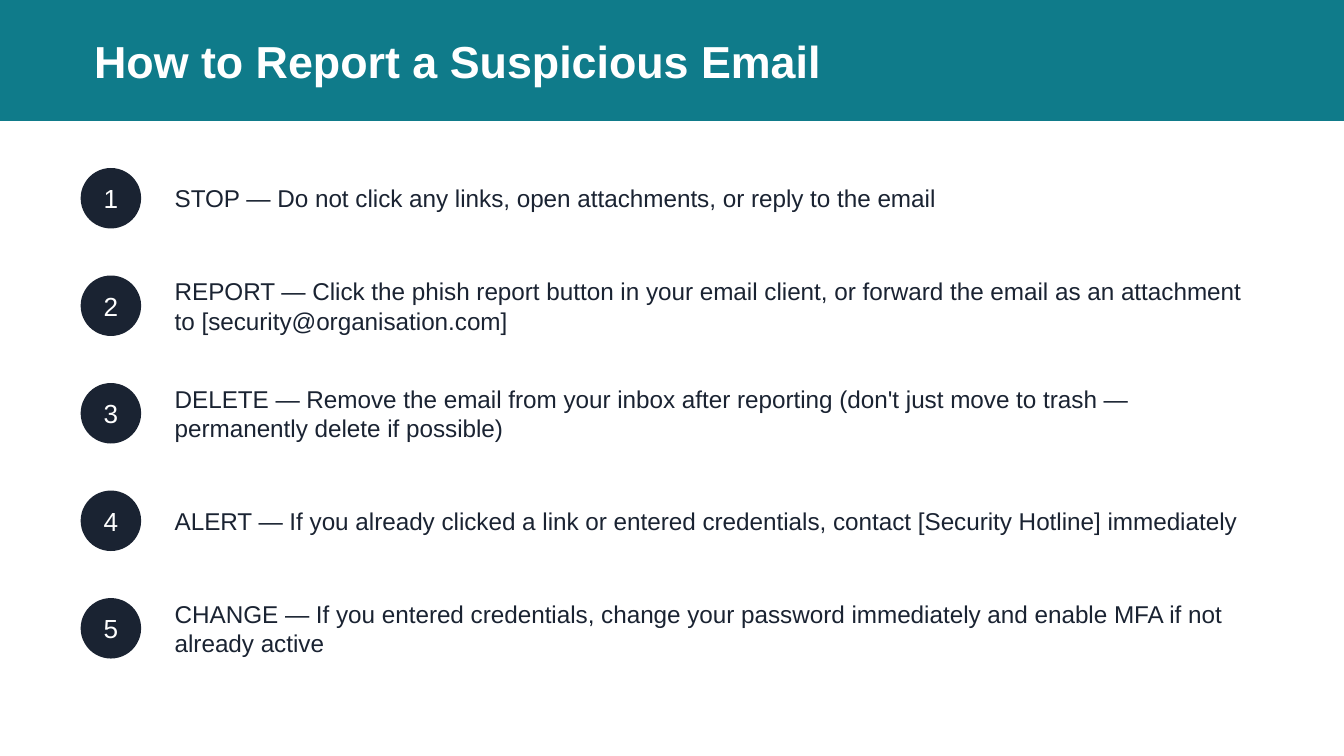
from pptx import Presentation
from pptx.dml.color import RGBColor
from pptx.enum import shapes, text
from pptx.util import Inches, Pt

TEAL = RGBColor(0x0F, 0x7B, 0x8A)
NAVY = RGBColor(0x1A, 0x23, 0x32)
WHITE = RGBColor(0xFF, 0xFF, 0xFF)

STEPS = [
    "STOP — Do not click any links, open attachments, or reply to the email",
    "REPORT — Click the phish report button in your email client, or forward "
    "the email as an attachment to [security@organisation.com]",
    "DELETE — Remove the email from your inbox after reporting "
    "(don't just move to trash — permanently delete if possible)",
    "ALERT — If you already clicked a link or entered credentials, "
    "contact [Security Hotline] immediately",
    "CHANGE — If you entered credentials, change your password immediately "
    "and enable MFA if not already active",
]
FIRST_TOP, STEP_PITCH = 1.2, 0.8
NO_MARGINS = dict.fromkeys(
    ("margin_left", "margin_top", "margin_right", "margin_bottom"), 0)


def write(shape, words, size, color, align, bold=False, frame_format={}):
    frame = shape.text_frame
    frame.text = words
    settings = {"word_wrap": True, "auto_size": text.MSO_AUTO_SIZE.NONE,
                "vertical_anchor": text.MSO_ANCHOR.MIDDLE, **frame_format}
    for key, value in settings.items():
        setattr(frame, key, value)
    paragraph = frame.paragraphs[0]
    paragraph.alignment = align
    font = paragraph.runs[0].font
    for key, value in {"name": "Arial", "size": Pt(size), "bold": bold}.items():
        setattr(font, key, value)
    font.color.rgb = color


def add_filled(slide, kind, left, top, width, height, color):
    shape = slide.shapes.add_shape(
        kind, Inches(left), Inches(top), Inches(width), Inches(height))
    shape.shadow.inherit = False
    shape.fill.solid()
    shape.fill.fore_color.rgb = color
    shape.line.fill.background()
    return shape


prs = Presentation()
prs.slide_width = Inches(10)
prs.slide_height = prs.slide_width * 9 // 16
slide = prs.slides.add_slide(prs.slide_layouts[5])

header = add_filled(slide, shapes.MSO_SHAPE.RECTANGLE, 0, 0, 10, 0.9, TEAL)
heading = slide.shapes.title
header.element.addnext(heading.element)
for key, value in {"left": 0.6, "top": 0.1, "width": 8.8, "height": 0.7}.items():
    setattr(heading, key, Inches(value))
write(heading, "How to Report a Suspicious Email", 24, WHITE,
      text.PP_ALIGN.LEFT, bold=True)

for index, instruction in enumerate(STEPS):
    top = FIRST_TOP + index * STEP_PITCH
    number = add_filled(slide, shapes.MSO_SHAPE.OVAL,
                        0.6, top + 0.05, 0.45, 0.45, NAVY)
    write(number, str(index + 1), 14, WHITE, text.PP_ALIGN.CENTER,
          frame_format=NO_MARGINS)
    step = slide.shapes.add_textbox(
        Inches(1.3), Inches(top), Inches(8), Inches(0.55))
    write(step, instruction, 13, NAVY, text.PP_ALIGN.LEFT,
          frame_format=NO_MARGINS)

prs.save("out.pptx")
